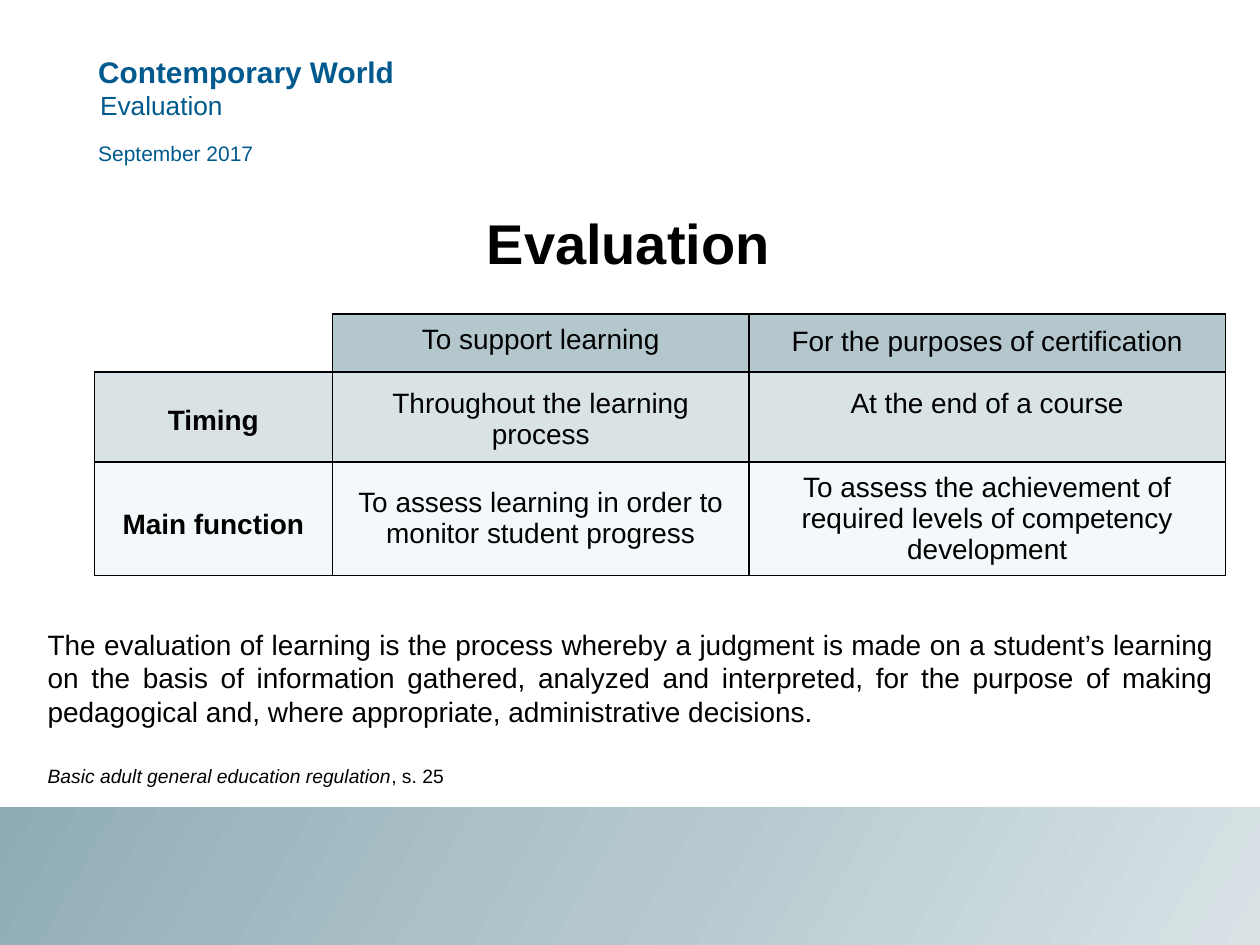
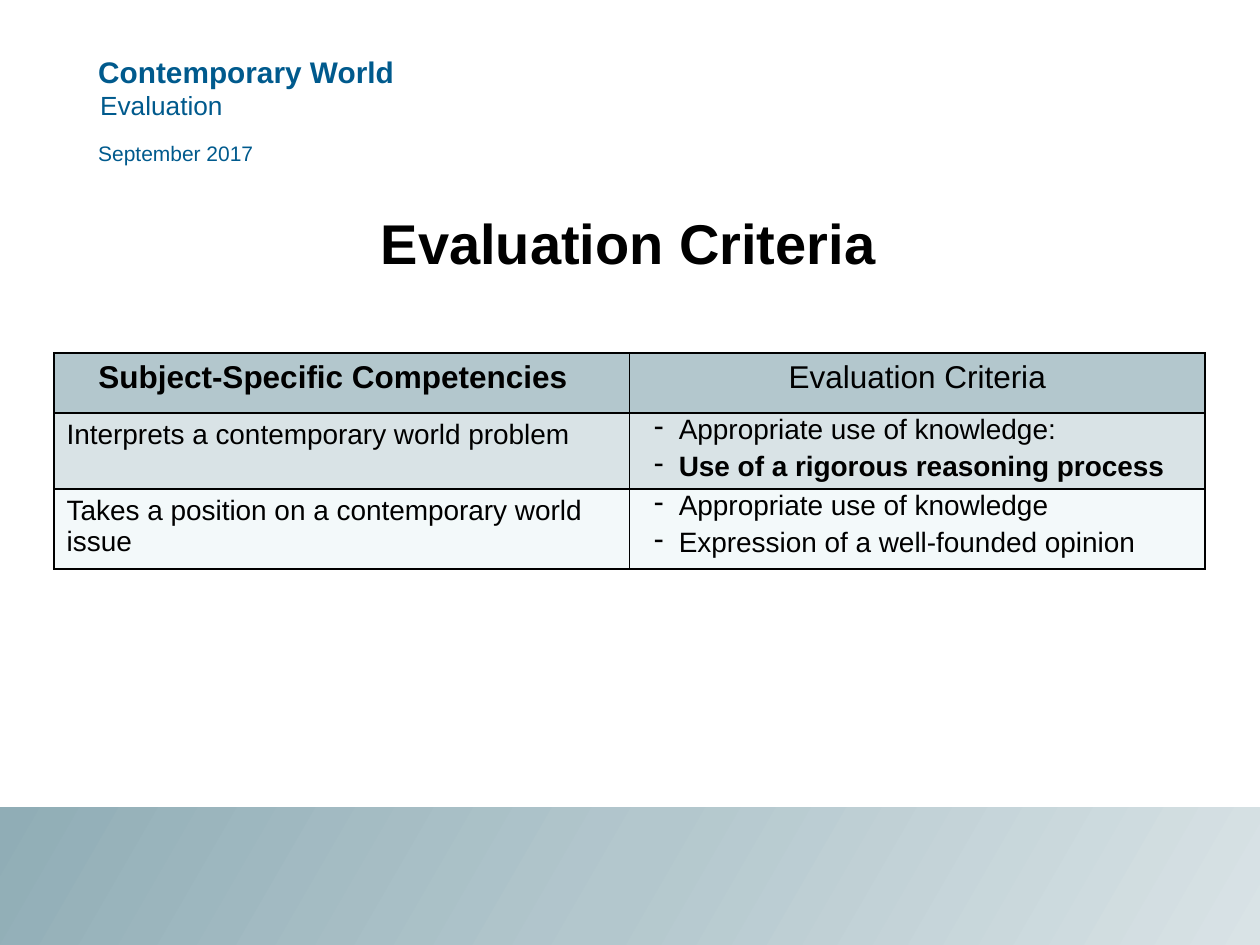
from copy import deepcopy

from lxml.etree import SubElement
from pptx import Presentation
from pptx.dml.color import RGBColor
from pptx.enum.shapes import MSO_SHAPE as Shape
from pptx.enum.text import MSO_ANCHOR as Anchor, MSO_AUTO_SIZE as AutoSize, PP_ALIGN as Align
from pptx.oxml.ns import qn
from pptx.util import Cm, Pt

FONT = "Arial"
BLACK = "000000"
BLUE = "005A8D"
BAND_STOPS = [(0, "D9E3E6"), (0.5, "B3C7CD"), (1, "90ADB6")]
HEADER_FILL = "B3C7CD"
ROW_FILLS = [HEADER_FILL, "D9E3E6", "F3F9FA"]
HEADING_LEFT = 1.98
TITLE_ONLY = 5


def rgb(color):
    return RGBColor.from_string(color)


def add_run(paragraph, text, size, color=BLACK, bold=False, italic=False):
    run = paragraph.add_run()
    run.text = text
    run.font.name = FONT
    run.font.size = Pt(size)
    run.font.bold = bold
    run.font.italic = italic
    run.font.color.rgb = rgb(color)


def clear_insets(frame):
    frame.margin_left = frame.margin_top = frame.margin_right = frame.margin_bottom = 0


def add_text_box(slide, left, top, width, height, wrap=True):
    box = slide.shapes.add_textbox(Cm(left), Cm(top), Cm(width), Cm(height))
    box.text_frame.word_wrap = wrap
    return box.text_frame


def add_heading(slide, text, top, width, height, size, bold=False, align=Align.LEFT, wrap=False):
    frame = add_text_box(slide, HEADING_LEFT, top, width, height, wrap)
    clear_insets(frame)
    paragraph = frame.paragraphs[0]
    paragraph.alignment = align
    add_run(paragraph, text, size, BLUE, bold)


def add_band(slide):
    band = slide.shapes.add_shape(Shape.RECTANGLE, 0, Cm(16.28), Cm(25.4), Cm(2.77))
    band.shadow.inherit = False
    band.line.fill.background()
    band.fill.gradient()
    band.fill.gradient_angle = 150
    first_stop = next(band._element.iter(qn("a:gs")))
    first_stop.addnext(deepcopy(first_stop))
    for stop, (position, color) in zip(band.fill.gradient_stops, BAND_STOPS):
        stop.position = position
        stop.color.rgb = rgb(color)


def add_base_slide(presentation, title):
    """Add a slide with the shared band, headings and title."""
    slide = presentation.slides.add_slide(presentation.slide_layouts[TITLE_ONLY])
    add_band(slide)
    add_heading(slide, "Contemporary World", 1.09, 6.12, 0.74, 17, bold=True)
    add_heading(slide, "Evaluation", 1.8, 2.51, 0.64, 15, align=Align.RIGHT)
    add_heading(slide, "September 2017", 2.84, 6.32, 0.48, 12, wrap=True)

    shape = slide.shapes.title
    shape.left, shape.top, shape.width, shape.height = Cm(1.9), Cm(4.11), Cm(21.54), Cm(1.55)
    frame = shape.text_frame
    frame.auto_size = AutoSize.NONE
    frame.vertical_anchor = Anchor.MIDDLE
    clear_insets(frame)
    frame.paragraphs[0].alignment = Align.CENTER
    add_run(frame.paragraphs[0], title, 32, bold=True)
    return slide


def set_borders(cell, hidden=()):
    properties = cell._tc.get_or_add_tcPr()
    for side in "LRTB":
        line = SubElement(properties, qn(f"a:ln{side}"), w=str(Pt(1)))
        if side in hidden:
            SubElement(line, qn("a:noFill"))
        else:
            fill = SubElement(line, qn("a:solidFill"))
            SubElement(fill, qn("a:srgbClr"), val=BLACK)


def add_table(slide, left, top, widths, heights):
    """Add a bordered table whose rows take the shared row fills."""
    table = slide.shapes.add_table(
        len(heights), len(widths), Cm(left), Cm(top), Cm(sum(widths)), Cm(sum(heights))
    ).table
    table.first_row = table.horz_banding = False
    for column, width in zip(table.columns, widths):
        column.width = Cm(width)
    for index, (row, height) in enumerate(zip(table.rows, heights)):
        row.height = Cm(height)
        for column_index, cell in enumerate(row.cells):
            is_blank_corner = index == column_index == 0 and len(widths) == 3
            set_borders(cell, "LT" if is_blank_corner else "")
            if is_blank_corner:
                cell.fill.background()
            else:
                cell.fill.solid()
                cell.fill.fore_color.rgb = rgb(ROW_FILLS[index])
    return table


def fill_cell(cell, text, size=16, bold=False, align=Align.CENTER, anchor=Anchor.TOP, margin_top=0.13):
    cell.vertical_anchor = anchor
    cell.margin_top = Cm(margin_top)
    paragraph = cell.text_frame.paragraphs[0]
    paragraph.alignment = align
    add_run(paragraph, text, size, bold=bold)


def fill_bullets(cell, items):
    """Write (text, bold) items as a dashed list."""
    frame = cell.text_frame
    for index, (text, bold) in enumerate(items):
        paragraph = frame.add_paragraph() if index else frame.paragraphs[0]
        properties = paragraph._p.get_or_add_pPr()
        properties.set("marL", str(Cm(0.74)))
        properties.set("indent", str(Cm(-0.5)))
        SubElement(properties, qn("a:buChar"), char="-")
        paragraph.line_spacing = Pt(15)
        paragraph.space_after = Pt(6)
        add_run(paragraph, text, 16, bold=bold)


def build_evaluation(presentation):
    slide = add_base_slide(presentation, "Evaluation")
    table = add_table(slide, 1.9, 6.33, [4.8, 8.4, 9.6], [1.17, 1.7, 2.18])
    middle = Anchor.MIDDLE
    fill_cell(table.cell(0, 1), "To support learning", margin_top=0.2)
    fill_cell(table.cell(0, 2), "For the purposes of certification", margin_top=0.24)
    fill_cell(table.cell(1, 0), "Timing", bold=True, anchor=middle, margin_top=0.27)
    fill_cell(table.cell(1, 1), "Throughout the learning process", margin_top=0.33)
    fill_cell(table.cell(1, 2), "At the end of a course", margin_top=0.33)
    fill_cell(table.cell(2, 0), "Main function", bold=True, anchor=middle, margin_top=0.37)
    fill_cell(table.cell(2, 1), "To assess learning in order to monitor student progress", anchor=middle)
    fill_cell(
        table.cell(2, 2),
        "To assess the achievement of required levels of competency development",
        anchor=middle,
    )

    frame = add_text_box(slide, 0.71, 12.52, 24, 3.56)
    definition = frame.paragraphs[0]
    definition.alignment = Align.JUSTIFY
    add_run(
        definition,
        "The evaluation of learning is the process whereby a judgment is made on a student’s "
        "learning on the basis of information gathered, analyzed and interpreted, for the purpose "
        "of making pedagogical and, where appropriate, administrative decisions.",
        16,
    )
    reference = frame.add_paragraph()
    reference.space_before = Pt(21)
    add_run(reference, "Basic adult general education regulation", 11, italic=True)
    add_run(reference, ", s. 25", 11)


def build_criteria(presentation):
    slide = add_base_slide(presentation, "Evaluation Criteria")
    table = add_table(slide, 1.09, 7.12, [11.6, 11.6], [1.21, 1.52, 1.52])
    competencies_header = table.cell(0, 0)
    fill_cell(competencies_header, "Subject-Specific Competencies", 18, bold=True)
    competencies_header.margin_right = Cm(0.61)
    fill_cell(table.cell(0, 1), "Evaluation Criteria", 18)

    competencies = [
        ("Interprets a contemporary world problem",
         [("Appropriate use of knowledge:", False), ("Use of a rigorous reasoning process", True)]),
        ("Takes a position on a contemporary world issue",
         [("Appropriate use of knowledge", False), ("Expression of a well-founded opinion", False)]),
    ]
    for row, (competency, criteria) in enumerate(competencies, start=1):
        fill_cell(table.cell(row, 0), competency, align=Align.LEFT)
        fill_bullets(table.cell(row, 1), criteria)


def main():
    presentation = Presentation()
    presentation.slide_width, presentation.slide_height = Cm(25.4), Cm(19.05)
    build_evaluation(presentation)
    build_criteria(presentation)
    presentation.save("out.pptx")


if __name__ == "__main__":
    main()
